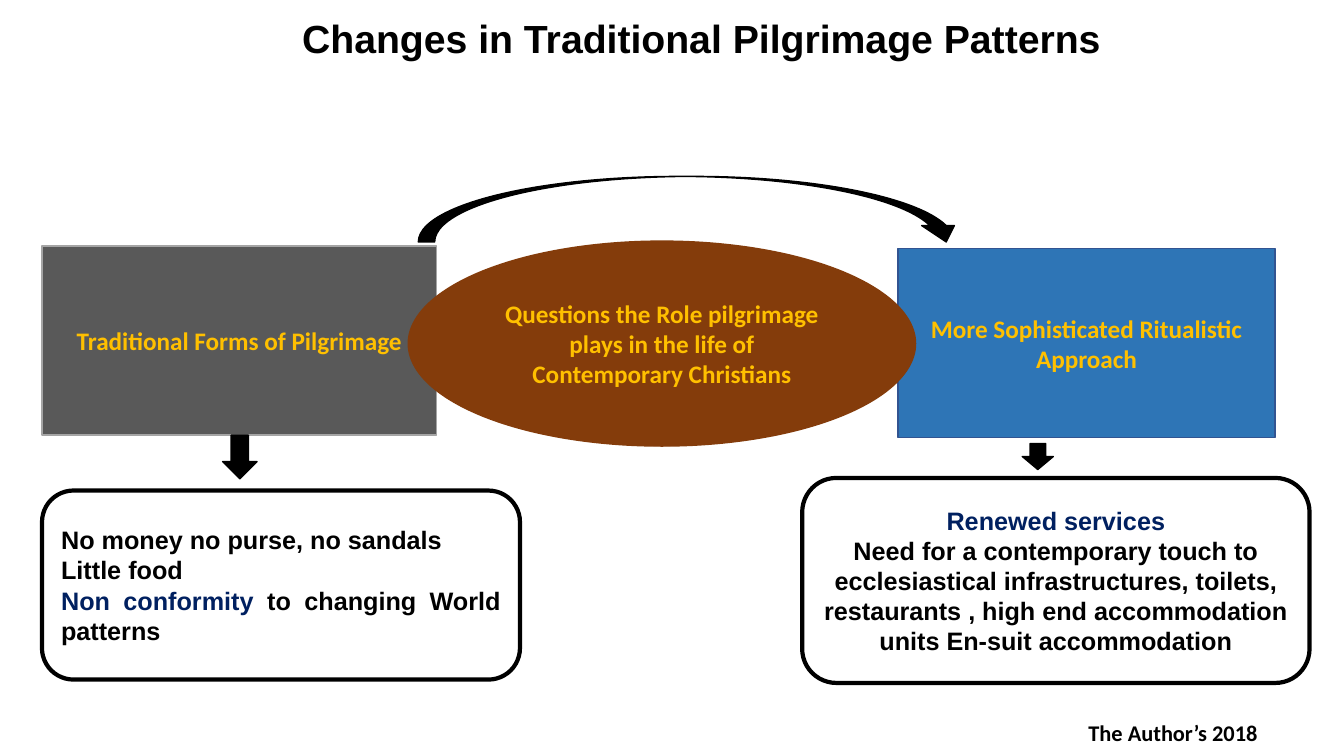
from dataclasses import dataclass

from pptx import Presentation
from pptx.dml.color import RGBColor
from pptx.enum.shapes import MSO_SHAPE as Shape
from pptx.enum.text import MSO_ANCHOR as Anchor, PP_ALIGN as Align
from pptx.util import Inches, Pt

COLS, ROWS = 160, 90
BLACK, WHITE, NAVY, GOLD, BROWN = "000000", "FFFFFF", "002060", "FFC000", "843C0B"


@dataclass(frozen=True)
class Run:
    text: str
    color: str = BLACK


@dataclass(frozen=True)
class Box:
    """A filled shape; col, row, cols and rows are grid cells."""
    kind: Shape
    col: float
    row: float
    cols: float
    rows: float
    fill: str = BLACK
    line: str = BLACK
    weight: float = 1
    paragraphs: tuple[tuple[Run, ...], ...] = ()
    font: str = "Calibri"
    size: float = 18
    align: Align = Align.CENTER


BOXES = [
    Box(Shape.RECTANGLE, 5, 29.3, 47, 22.5, "595959", "A5A5A5",
        paragraphs=((Run("Traditional Forms of Pilgrimage", GOLD),),)),
    Box(Shape.RECTANGLE, 106.9, 29.6, 44.9, 22.5, "2E75B6", "325491",
        paragraphs=((Run("More Sophisticated Ritualistic Approach", GOLD),),)),
    Box(Shape.OVAL, 48.6, 28.7, 60.4, 24.4, BROWN, BROWN,
        paragraphs=((Run("Questions the Role pilgrimage plays in the life of "
                         "Contemporary Christians", GOLD),),)),
    Box(Shape.CURVED_DOWN_ARROW, 49.8, 21, 64.8, 7.8),
    Box(Shape.ROUNDED_RECTANGLE, 95.5, 56.9, 60.4, 24.4, WHITE, weight=3, font="Arial",
        paragraphs=((Run("Renewed services", NAVY),),
                    (Run("Need for a contemporary touch to ecclesiastical infrastructures, "
                         "toilets, restaurants , high end accommodation units "
                         "En-suit accommodation"),))),
    Box(Shape.ROUNDED_RECTANGLE, 5, 58.4, 56.9, 22.5, WHITE, weight=3, font="Arial",
        align=Align.JUSTIFY,
        paragraphs=((Run("No money no purse, no sandals"),),
                    (Run("Little food"),),
                    (Run("Non conformity", NAVY), Run(" to changing World patterns")))),
    Box(Shape.DOWN_ARROW, 26.5, 51.8, 4.1, 5.2),
    Box(Shape.DOWN_ARROW, 121.7, 52.8, 3.7, 3.1),
    Box(Shape.RECTANGLE, 126.8, 85.9, 25.7, 2.6, WHITE, WHITE, size=16,
        paragraphs=((Run("The Author’s 2018"),),)),
]


def rgb(color: str) -> RGBColor:
    return RGBColor.from_string(color)


def cells(prs, col: float, row: float, cols: float, rows: float) -> tuple[int, ...]:
    """Turn grid cells into left, top, width and height."""
    w, h = prs.slide_width / COLS, prs.slide_height / ROWS
    return int(col * w), int(row * h), int(cols * w), int(rows * h)


def add_run(p, run: Run, font: str, size: float) -> None:
    r = p.add_run()
    r.text = run.text
    r.font.name, r.font.size, r.font.bold = font, Pt(size), True
    r.font.color.rgb = rgb(run.color)


def add_title(prs, s, text: str) -> None:
    sp = s.shapes.title
    sp.left, sp.top, sp.width, sp.height = cells(prs, 14.5, 1.9, 138, 6)
    tf = sp.text_frame
    tf.word_wrap, tf.vertical_anchor = True, Anchor.MIDDLE
    p = tf.paragraphs[0]
    p.alignment, p.line_spacing = Align.CENTER, 0.9
    add_run(p, Run(text), "Arial", 28)


def add_box(prs, s, box: Box) -> None:
    sp = s.shapes.add_shape(box.kind, *cells(prs, box.col, box.row, box.cols, box.rows))
    sp.shadow.inherit = False
    sp.fill.solid()
    sp.fill.fore_color.rgb = rgb(box.fill)
    sp.line.color.rgb = rgb(box.line)
    sp.line.width = Pt(box.weight)
    tf = sp.text_frame
    tf.word_wrap, tf.vertical_anchor = True, Anchor.MIDDLE
    for i, runs in enumerate(box.paragraphs):
        p = tf.add_paragraph() if i else tf.paragraphs[0]
        p.alignment = box.align
        for run in runs:
            add_run(p, run, box.font, box.size)


def main() -> None:
    prs = Presentation()
    prs.slide_width, prs.slide_height = Inches(13.33), Inches(7.5)
    s = prs.slides.add_slide(prs.slide_layouts[5])
    add_title(prs, s, "Changes in Traditional Pilgrimage Patterns")
    for box in BOXES:
        add_box(prs, s, box)
    prs.save("out.pptx")


if __name__ == "__main__":
    main()
